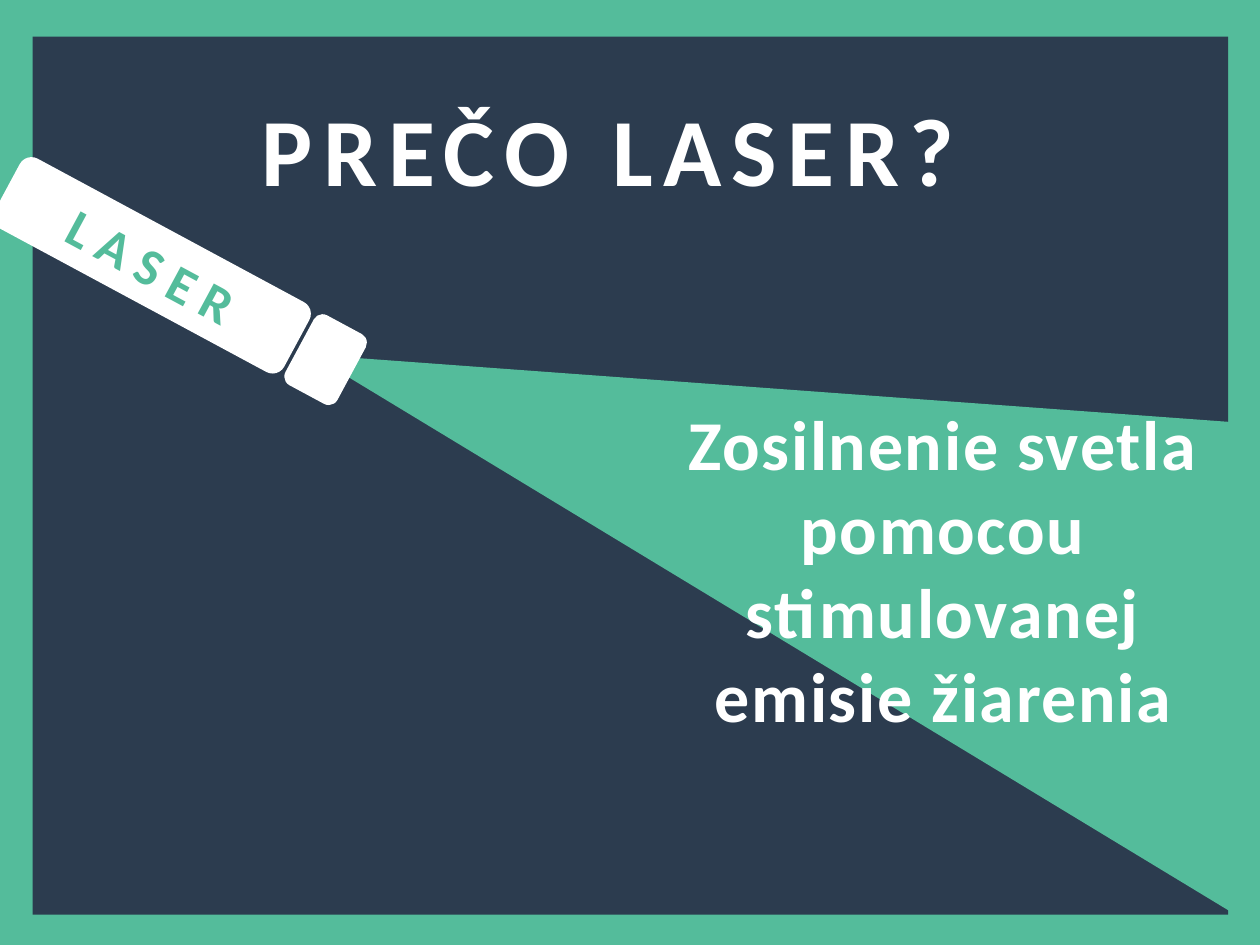
from pptx import Presentation
from pptx.dml.color import RGBColor
from pptx.enum.shapes import MSO_SHAPE as Shape
from pptx.enum.text import MSO_ANCHOR as Anchor, MSO_AUTO_SIZE as AutoSize, PP_ALIGN as Align
from pptx.util import Cm, Pt

GREEN = RGBColor(0x54, 0xBC, 0x9B)
NAVY = RGBColor(0x2C, 0x3C, 0x4F)
WHITE = RGBColor(0xFF, 0xFF, 0xFF)
TUBE_ANGLE = 28.3


def add_block(slide, kind, box, color, rotation=0):
    block = slide.shapes.add_shape(kind, *map(Cm, box))
    block.shadow.inherit = False
    block.fill.solid()
    block.fill.fore_color.rgb = color
    block.line.fill.background()
    block.rotation = rotation
    return block


def write(holder, text, size, color, spacing=0, **frame_format):
    frame = holder.text_frame
    for name, value in frame_format.items():
        setattr(frame, name, value)
    paragraph = frame.paragraphs[0]
    paragraph.alignment = Align.CENTER
    run = paragraph.add_run()
    run.text = text
    font_format = {"name": "Calibri", "size": Pt(size), "bold": True}
    for name, value in font_format.items():
        setattr(run.font, name, value)
    run.font.color.rgb = color
    if spacing:
        run.font._element.set("spc", str(spacing * 100))


def place_title(slide, panel, text):
    title = slide.shapes.title
    position = {"left": 2.27, "top": 1.48, "width": 20, "height": 3}
    for name, value in position.items():
        setattr(title, name, Cm(value))
    panel._element.addnext(title._element)
    write(title, text, 55, WHITE, 6, vertical_anchor=Anchor.MIDDLE,
          auto_size=AutoSize.NONE, word_wrap=True)


def add_laser(slide):
    tube = add_block(slide, Shape.ROUNDED_RECTANGLE, (-0.25, 4.55, 6.63, 1.6), WHITE, TUBE_ANGLE)
    write(tube, "L A S E R", 30, GREEN, vertical_anchor=Anchor.MIDDLE, word_wrap=True)
    add_block(slide, Shape.ROUNDED_RECTANGLE, (5.97, 6.45, 1.19, 1.6), WHITE, TUBE_ANGLE)


def main():
    deck = Presentation()
    deck.slide_width, deck.slide_height = Cm(25.4), Cm(19.05)
    slide = deck.slides.add_slide(deck.slide_layouts[5])
    slide.background.fill.solid()
    slide.background.fill.fore_color.rgb = GREEN

    panel = add_block(slide, Shape.RECTANGLE, (0.66, 0.74, 24.1, 17.7), NAVY)
    place_title(slide, panel, "PREČO LASER?")
    add_block(slide, Shape.ISOSCELES_TRIANGLE, (11.33, -0.3, 10.29, 21.41), GREEN, 287.7)
    meaning = slide.shapes.add_textbox(*map(Cm, (12.9, 7.95, 12.24, 7.09)))
    write(meaning, "Zosilnenie svetla pomocou stimulovanej emisie žiarenia", 40, WHITE, 1,
          word_wrap=True, auto_size=AutoSize.SHAPE_TO_FIT_TEXT)
    add_laser(slide)
    deck.save("out.pptx")


if __name__ == "__main__":
    main()
